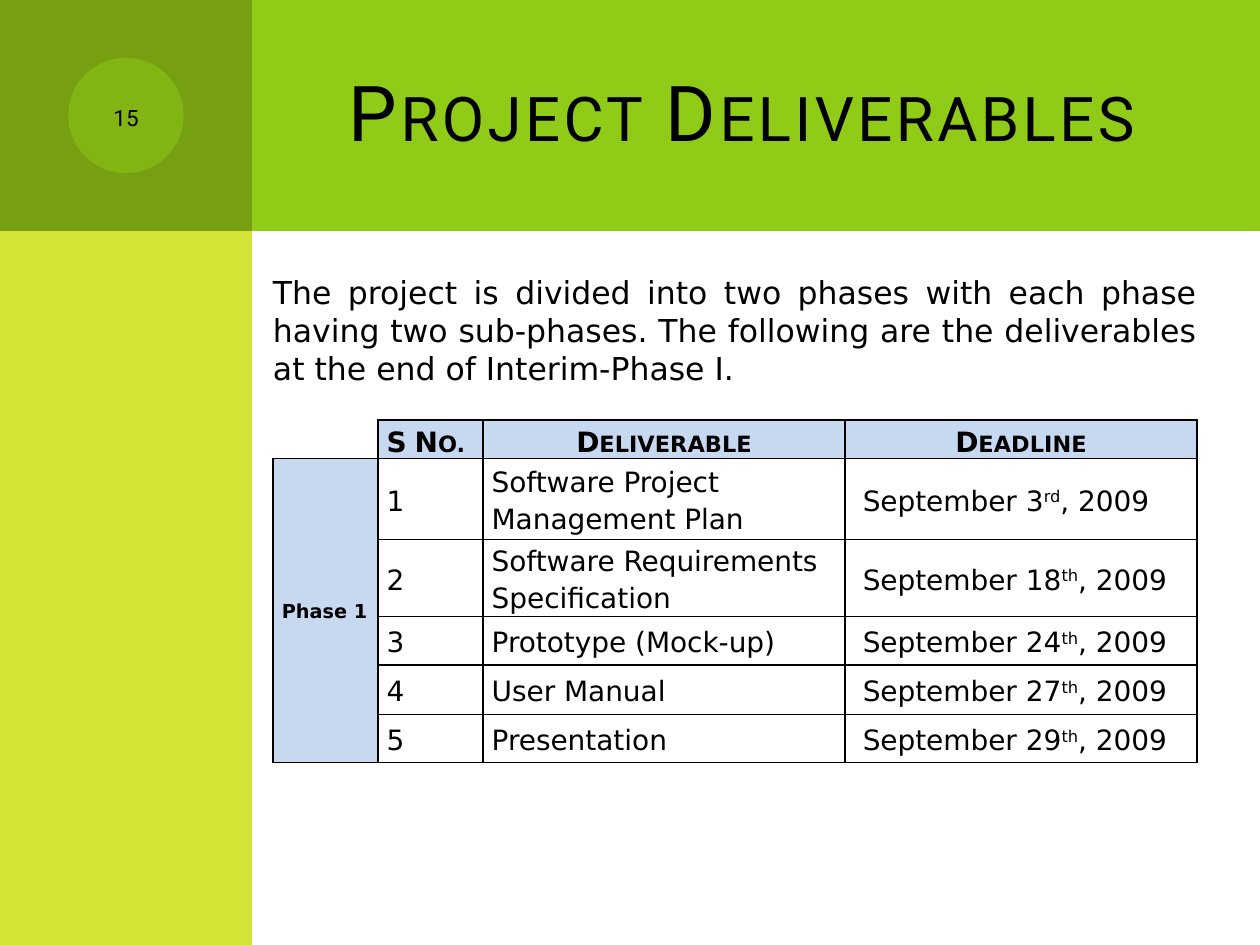
from lxml import etree
from pptx import Presentation
from pptx import util as u
from pptx.dml.color import RGBColor
from pptx.enum import shapes, text
from pptx.oxml import ns

LEFT, CENTER, RIGHT, JUSTIFY = (text.PP_ALIGN.LEFT, text.PP_ALIGN.CENTER,
                                text.PP_ALIGN.RIGHT, text.PP_ALIGN.JUSTIFY)
TOP, MIDDLE, BOTTOM = (text.MSO_ANCHOR.TOP, text.MSO_ANCHOR.MIDDLE,
                       text.MSO_ANCHOR.BOTTOM)


def color(value):
    return RGBColor.from_string(value)


def child(parent, tag, **attributes):
    return etree.SubElement(parent, ns.qn(tag), **attributes)


def write(frame, words, size=16, font="DejaVu Sans", bold=False, align=LEFT,
          small_caps=False, tracking=0, line=None, after=None):
    """Fill one paragraph; words is a string or (string, baseline) pairs."""
    paragraph = frame.paragraphs[0]
    paragraph.alignment = align
    if line:
        paragraph.line_spacing = line
    if after:
        paragraph.space_after = u.Pt(after)
    for part, baseline in [(words, 0)] if isinstance(words, str) else words:
        run = paragraph.add_run()
        run.text = part
        run.font.size, run.font.name, run.font.bold = u.Pt(size), font, bold
        run.font.color.rgb = color("000000")
        properties = run._r.get_or_add_rPr()
        if small_caps:
            properties.set("cap", "small")
        if tracking:
            properties.set("spc", str(tracking * 100))
        if baseline:
            properties.set("baseline", str(baseline * 1000))


class Deck:
    """Style and current slide; lengths are in a grid of 12 columns by 9 rows."""
    GREEN, DARK, LIME, BLUE = "8FCB17", "769F11", "D4E336", "C6D9F1"
    HEADING = "Roboto"

    def __init__(self):
        self.presentation = Presentation()
        self.presentation.slide_width = u.Inches(10)
        self.presentation.slide_height = u.Inches(7.5)
        self.slide = self.presentation.slides.add_slide(
            self.presentation.slide_layouts[6])

    def x(self, columns):
        return round(self.presentation.slide_width * columns / 12)

    def y(self, rows):
        return round(self.presentation.slide_height * rows / 9)

    def box(self, left, top, width, height):
        return self.x(left), self.y(top), self.x(width), self.y(height)

    def panel(self, place, fill, kind=shapes.MSO_SHAPE.RECTANGLE, opacity=100):
        shape = self.slide.shapes.add_shape(kind, *self.box(*place))
        shape.shadow.inherit = False
        shape.fill.solid()
        shape.fill.fore_color.rgb = color(fill)
        shape.line.fill.background()
        if opacity < 100:
            tint = shape._element.spPr.find(".//" + ns.qn("a:srgbClr"))
            child(tint, "a:alpha", val=str(opacity * 1000))

    def label(self, place, words, anchor=MIDDLE, insets=(.1, .05, .1, .05), **style):
        frame = self.slide.shapes.add_textbox(*self.box(*place)).text_frame
        frame.word_wrap = True
        frame.vertical_anchor = anchor
        (frame.margin_left, frame.margin_top,
         frame.margin_right, frame.margin_bottom) = map(u.Inches, insets)
        write(frame, words, **style)

    def table(self, left, top, columns, rows):
        place = self.box(left, top, sum(columns), sum(rows))
        table = self.slide.shapes.add_table(len(rows), len(columns), *place).table
        table.first_row = table.horz_banding = False
        for column, width in zip(table.columns, columns):
            column.width = self.x(width)
        for row, height in zip(table.rows, rows):
            row.height = self.y(height)
        for cell in table.iter_cells():
            cell.margin_left = cell.margin_right = u.Inches(.07)
            cell.margin_top = cell.margin_bottom = 0
            cell.fill.background()
            self.borders(cell)
        return table

    def borders(self, cell, sides="LRTB"):
        properties = cell._tc.get_or_add_tcPr()
        for index, side in enumerate("LRTB"):
            for old in properties.findall(ns.qn("a:ln" + side)):
                properties.remove(old)
            line = child(properties, "a:ln" + side, w=str(u.Pt(1)))
            if side in sides:
                child(child(line, "a:solidFill"), "a:srgbClr", val="000000")
            else:
                child(line, "a:noFill")
            properties.insert(index, line)

    def cell(self, cell, words, fill=None, anchor=MIDDLE, **style):
        cell.vertical_anchor = anchor
        if fill:
            cell.fill.solid()
            cell.fill.fore_color.rgb = color(fill)
        write(cell.text_frame, words, line=1.15, after=10, **style)


def main():
    deck = Deck()

    # Background bands and the number badge
    deck.panel((.6, 0, 11.4, 2.2), deck.GREEN)
    deck.panel((0, 0, 2.4, 9), deck.LIME)
    deck.panel((0, 0, 2.4, 2.2), deck.DARK)
    deck.panel((.65, .55, 1.1, 1.1), deck.GREEN, shapes.MSO_SHAPE.OVAL, opacity=50)

    # Title
    deck.label((3.2, .3, 8.2, 1.5), "Project Deliverables", size=44,
               font=deck.HEADING, align=RIGHT, small_caps=True, tracking=2)

    # Deliverables table
    table = deck.table(2.6, 4, columns=(1, 1, 3.45, 3.35),
                       rows=(.35, .77, .71, .46, .47, .46))
    deck.borders(table.cell(0, 0), "RB")
    headings = (("S No.", JUSTIFY), ("Deliverable", CENTER), ("Deadline", CENTER))
    for column, (heading, align) in enumerate(headings, 1):
        deck.cell(table.cell(0, column), heading, fill=deck.BLUE, anchor=BOTTOM,
                  bold=True, align=align, small_caps=True)

    phase = table.cell(1, 0)
    phase.merge(table.cell(5, 0))
    deck.cell(phase, "Phase 1", fill=deck.BLUE, size=11, bold=True, align=JUSTIFY)

    deliverables = (
        ("Software Project Management Plan", 3, "rd"),
        ("Software Requirements Specification", 18, "th"),
        ("Prototype (Mock-up)", 24, "th"),
        ("User Manual", 27, "th"),
        ("Presentation", 29, "th"),
    )
    for number, (deliverable, day, suffix) in enumerate(deliverables, 1):
        deck.cell(table.cell(number, 1), str(number), align=JUSTIFY)
        deck.cell(table.cell(number, 2), deliverable)
        deadline = table.cell(number, 3)
        deadline.margin_left = u.Inches(.14)
        deck.cell(deadline, ((f"September {day}", 0), (suffix, 30), (", 2009", 0)))

    # Introduction
    deck.label((2.6, 2.4, 8.8, 1.7),
               "The project is divided into two phases with each phase having two "
               "sub-phases. The following are the deliverables at the end of "
               "Interim-Phase I.",
               anchor=TOP, insets=(0, .17, 0, .04), size=18, align=JUSTIFY)

    # Slide number
    deck.label((.7, .7, 1, .8), "15", font=deck.HEADING, align=CENTER,
               small_caps=True)

    deck.presentation.save("out.pptx")


if __name__ == "__main__":
    main()
